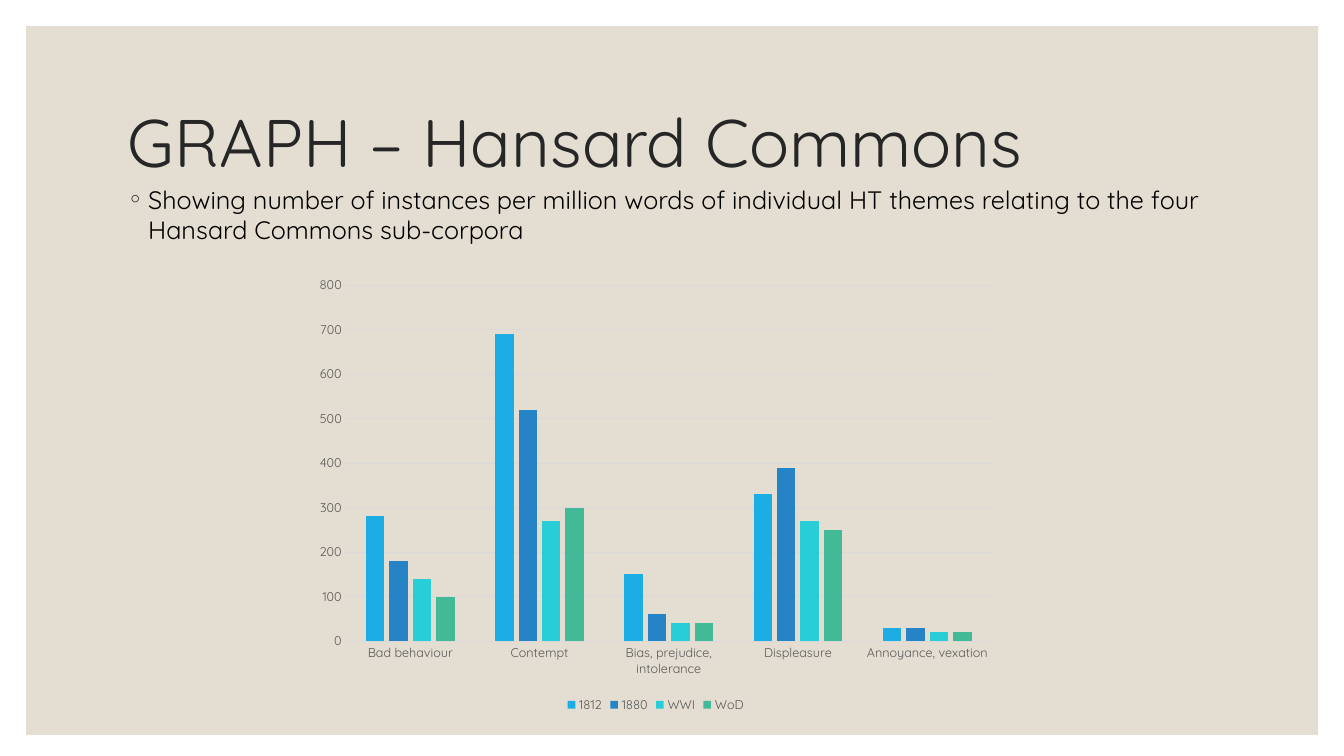
from lxml import etree
from pptx import Presentation
from pptx.chart.data import CategoryChartData
from pptx.dml.color import RGBColor
from pptx.enum.chart import XL_CHART_TYPE, XL_LEGEND_POSITION, XL_TICK_MARK
from pptx.enum.shapes import MSO_SHAPE
from pptx.enum.text import MSO_ANCHOR, MSO_AUTO_SIZE, PP_ALIGN
from pptx.oxml.ns import qn
from pptx.util import Cm, Pt

COLUMNS = XL_CHART_TYPE.COLUMN_CLUSTERED
BOTTOM = XL_LEGEND_POSITION.BOTTOM
NO_TICK = XL_TICK_MARK.NONE
RECT = MSO_SHAPE.RECTANGLE
TOP, MIDDLE = MSO_ANCHOR.TOP, MSO_ANCHOR.MIDDLE
NO_FIT = MSO_AUTO_SIZE.NONE
LEFT = PP_ALIGN.LEFT

FONT = "Quicksand"
BEIGE, DARK, BLACK, GREY, PALE = "E3DED1", "262626", "000000", "595959", "D9D9D9"

THEMES = ["Bad behaviour", "Contempt", "Bias, prejudice, intolerance",
          "Displeasure", "Annoyance, vexation"]
CORPORA = [
    ("1812", "1CADE4", (280, 690, 150, 330, 30)),
    ("1880", "2683C6", (180, 520, 60, 390, 30)),
    ("WWI", "27CED7", (140, 270, 40, 270, 20)),
    ("WoD", "42BA97", (100, 300, 40, 250, 20)),
]


def rgb(value):
    return RGBColor.from_string(value)


def set_font(font, size, color):
    font.name = FONT
    font.size = Pt(size)
    font.color.rgb = rgb(color)


def place(sp, left, top, width, height):
    sp.left, sp.top, sp.width, sp.height = Cm(left), Cm(top), Cm(width), Cm(height)


def add_panel(s):
    sp = s.shapes.add_shape(RECT, Cm(0.66), Cm(0.66), Cm(32.56), Cm(17.86))
    sp.shadow.inherit = False
    sp.fill.solid()
    sp.fill.fore_color.rgb = rgb(BEIGE)
    sp.line.fill.background()
    s.shapes.element.insert(2, sp.element)


def fill_text(sp, text, size, color, anchor):
    tf = sp.text_frame
    tf.text = text
    tf.word_wrap = True
    tf.auto_size = NO_FIT
    tf.vertical_anchor = anchor
    p = tf.paragraphs[0]
    p.alignment = LEFT
    set_font(p.runs[0].font, size, color)
    return p


def add_bullet(p, char, color, indent):
    pPr = p._p.get_or_add_pPr()
    pPr.set("marL", str(indent))
    pPr.set("indent", str(-indent))
    clr = etree.SubElement(pPr, qn("a:buClr"))
    etree.SubElement(clr, qn("a:srgbClr")).set("val", color)
    etree.SubElement(pPr, qn("a:buFont")).set("typeface", FONT)
    etree.SubElement(pPr, qn("a:buChar")).set("char", char)


def format_axis(axis):
    axis.major_tick_mark = axis.minor_tick_mark = NO_TICK
    set_font(axis.tick_labels.font, 9, GREY)


def set_line(line):
    line.color.rgb = rgb(PALE)
    line.width = Pt(0.75)


def add_theme_chart(s):
    data = CategoryChartData()
    data.categories = THEMES
    for name, _, values in CORPORA:
        data.add_series(name, values)
    chart = s.shapes.add_chart(COLUMNS, Cm(7.7), Cm(6.76), Cm(17.65), Cm(11.3), data).chart
    set_font(chart.font, 10, BLACK)
    chart.has_title = False
    chart.has_legend = True
    chart.legend.position = BOTTOM
    chart.legend.include_in_layout = False
    set_font(chart.legend.font, 9, GREY)

    format_axis(chart.category_axis)
    set_line(chart.category_axis.format.line)
    axis = chart.value_axis
    format_axis(axis)
    axis.minimum_scale, axis.maximum_scale, axis.major_unit = 0, 800, 100
    axis.format.line.fill.background()
    set_line(axis.major_gridlines.format.line)

    plot = chart.plots[0]
    plot.gap_width, plot.overlap, plot.vary_by_categories = 219, -27, False
    for series, (_, color, _) in zip(plot.series, CORPORA):
        series.format.fill.solid()
        series.format.fill.fore_color.rgb = rgb(color)


def main():
    prs = Presentation()
    prs.slide_width, prs.slide_height = Cm(33.87), Cm(19.05)
    s = prs.slides.add_slide(prs.slide_layouts[1])
    add_panel(s)

    title, body = s.shapes.title, s.placeholders[1]
    place(title, 2.97, 1.78, 27.94, 3.81)
    p = fill_text(title, "GRAPH – Hansard Commons", 48, DARK, MIDDLE)
    p.line_spacing = 0.9

    place(body, 2.97, 4.52, 27.94, 11.71)
    p = fill_text(body, "Showing number of instances per million words of individual HT themes "
                  "relating to the four Hansard Commons sub-corpora", 18, BLACK, TOP)
    p.space_before = Pt(9)
    add_bullet(p, "◦", DARK, Cm(0.51))

    add_theme_chart(s)
    prs.save("out.pptx")


if __name__ == "__main__":
    main()
